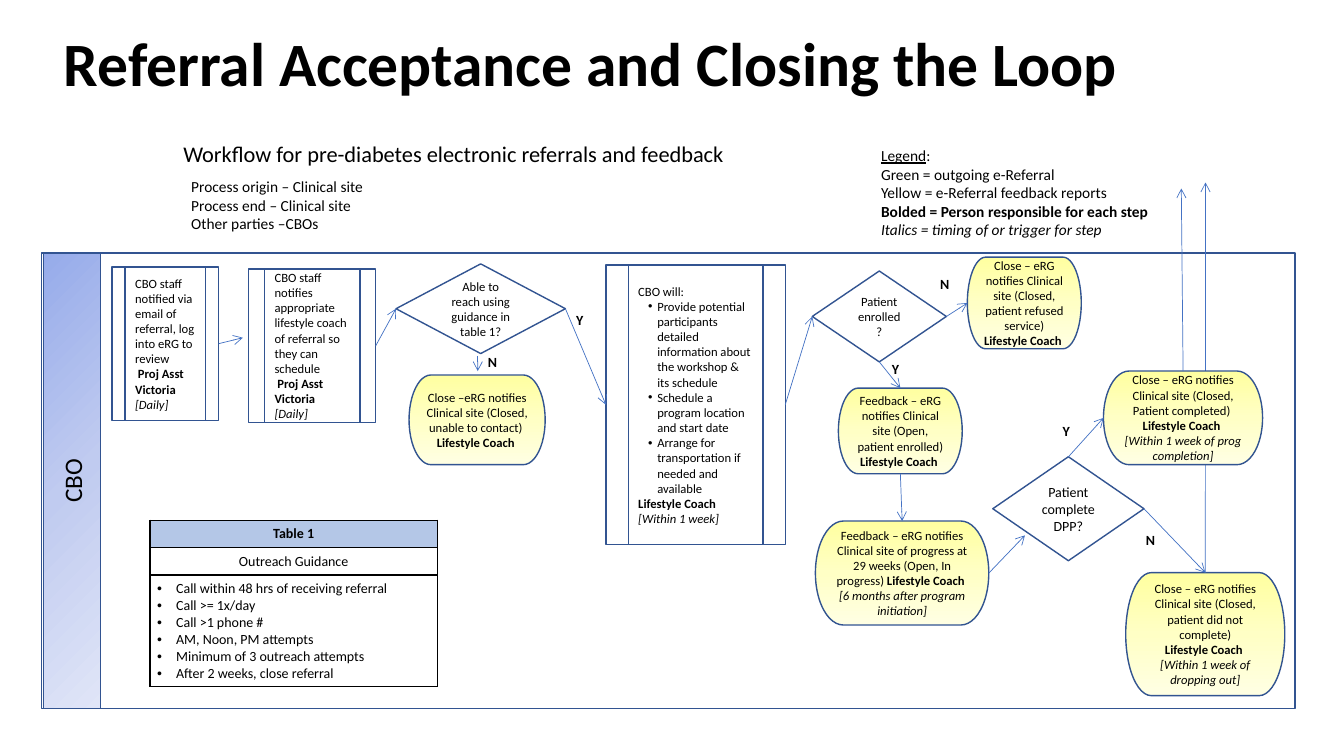
import copy

import lxml.etree
import pptx
import pptx.dml.color
import pptx.enum.shapes
import pptx.enum.text
import pptx.oxml.ns
import pptx.util

Cm = pptx.util.Cm
Pt = pptx.util.Pt
RGBColor = pptx.dml.color.RGBColor
Preset = pptx.enum.shapes.MSO_SHAPE
Align = pptx.enum.text.PP_ALIGN
Anchor = pptx.enum.text.MSO_ANCHOR
qn = pptx.oxml.ns.qn

BLACK = RGBColor(0x00, 0x00, 0x00)
OUTLINE = RGBColor(0x32, 0x54, 0x91)
ARROW = RGBColor(0x44, 0x72, 0xC4)
TABLE_HEAD = RGBColor(0xB4, 0xC7, 0xE7)
LANE_BLUES = [RGBColor(0x96, 0xAB, 0xEA), RGBColor(0xC0, 0xCB, 0xF0), RGBColor(0xE0, 0xE5, 0xF7)]
REPORT_YELLOWS = [RGBColor(0xFF, 0xFF, 0xA0), RGBColor(0xFF, 0xFF, 0xC5), RGBColor(0xFF, 0xFF, 0xE3)]

TOP, LEFT, BOTTOM, RIGHT = range(4)
BOLD = {"bold": True}
ITALIC = {"italic": True}
COACH = [("Lifestyle Coach ", BOLD)]
ASSISTANT = [[(" Proj Asst Victoria", BOLD)], [("[Daily]", ITALIC)]]
GUIDANCE = [
    "Call within 48 hrs of receiving referral",
    "Call >= 1x/day",
    "Call >1 phone #",
    "AM, Noon, PM attempts",
    "Minimum of 3 outreach attempts",
    "After 2 weeks, close referral",
]
WORKSHOP_TASKS = [
    "Provide potential participants detailed information about the workshop & its schedule",
    "Schedule a program location and start date",
    "Arrange for transportation if needed and available",
]


def apply_format(target, values):
    for name, value in values.items():
        setattr(target, name, value)


def box(left, top, width, height):
    return {"left": Cm(left), "top": Cm(top), "width": Cm(width), "height": Cm(height)}


def set_bullet(paragraph, indent):
    properties = paragraph._p.get_or_add_pPr()
    properties.set("marL", str(Cm(indent[0])))
    properties.set("indent", str(Cm(indent[1])))
    if indent[0]:
        lxml.etree.SubElement(properties, qn("a:buFont")).set("typeface", "Arial")
        lxml.etree.SubElement(properties, qn("a:buChar")).set("char", "•")
    else:
        lxml.etree.SubElement(properties, qn("a:buNone"))


def write(frame, paragraphs, size, align=Align.LEFT, bullets=None, spacing=1.0):
    for index, runs in enumerate(paragraphs):
        paragraph = frame.paragraphs[0] if index == 0 else frame.add_paragraph()
        apply_format(paragraph, {"alignment": align, "line_spacing": spacing, "space_before": Pt(0)})
        for wording, emphasis in [(runs, {})] if isinstance(runs, str) else runs:
            run = paragraph.add_run()
            run.text = wording
            apply_format(run.font, {"name": "Calibri", "size": Pt(size), "bold": False, **emphasis})
            run.font.color.rgb = BLACK
        if bullets and index in bullets:
            set_bullet(paragraph, bullets[index])


def shade(shape, colors, angle):
    shape.fill.gradient()
    shape.fill.gradient_angle = angle
    stops = shape.element.spPr.find(qn("a:gradFill")).find(qn("a:gsLst"))
    stops.insert(1, copy.deepcopy(stops[0]))
    for stop, position, color in zip(shape.fill.gradient_stops, (0, 0.5, 1), colors):
        stop.position = position
        stop.color.rgb = color


def add_step(slide, preset, place, paragraphs=(), size=9, align=Align.CENTER, bullets=None):
    step = slide.shapes.add_shape(preset, *box(*place).values())
    step.shadow.inherit = False
    step.fill.background()
    step.line.color.rgb = OUTLINE
    step.line.width = Pt(1)
    apply_format(step.text_frame, {"word_wrap": True, "vertical_anchor": Anchor.MIDDLE})
    write(step.text_frame, paragraphs, size, align, bullets)
    return step


def add_process(slide, place, paragraphs, bullets=None):
    return add_step(slide, Preset.FLOWCHART_PREDEFINED_PROCESS, place, paragraphs, 9, Align.LEFT, bullets)


def add_decision(slide, place, question, size=9):
    return add_step(slide, Preset.FLOWCHART_DECISION, place, [question], size)


def add_report(slide, place, paragraphs):
    report = add_step(slide, Preset.FLOWCHART_TERMINATOR, place, paragraphs)
    shade(report, REPORT_YELLOWS, 270)
    return report


def add_arrow(slide, start, end):
    points = [(Cm(spot[0]), Cm(spot[1])) if isinstance(spot[0], (int, float)) else (0, 0) for spot in (start, end)]
    arrow = slide.shapes.add_connector(pptx.enum.shapes.MSO_CONNECTOR.STRAIGHT, *points[0], *points[1])
    for spot, join in ((start, arrow.begin_connect), (end, arrow.end_connect)):
        if not isinstance(spot[0], (int, float)):
            join(*spot)
    arrow.line.color.rgb = ARROW
    arrow.line.width = Pt(0.5)
    lxml.etree.SubElement(arrow.line._get_or_add_ln(), qn("a:tailEnd")).set("type", "arrow")
    lxml.etree.SubElement(arrow.element.spPr, qn("a:effectLst"))


def add_note(slide, place, paragraphs, size, align=Align.LEFT, **frame_format):
    note = slide.shapes.add_textbox(*box(*place).values())
    apply_format(note.text_frame, {"word_wrap": False, **frame_format})
    write(note.text_frame, paragraphs, size, align)


def add_outreach_table(slide):
    table = slide.shapes.add_table(3, 1, *box(3.78, 13.11, 7.24, 4.15).values()).table
    apply_format(table, {"first_row": False, "horz_banding": False})
    contents = [
        ([[("Table 1", BOLD)]], 0.69, Align.CENTER, None),
        (["Outreach Guidance"], 0.69, Align.CENTER, None),
        (GUIDANCE, 2.77, Align.LEFT, dict.fromkeys(range(len(GUIDANCE)), (0.48, -0.48))),
    ]
    margins = {"margin_left": Cm(0.18), "margin_right": Cm(0.18), "margin_top": Cm(0.13), "margin_bottom": Cm(0.13)}
    for index, (paragraphs, height, align, bullets) in enumerate(contents):
        table.rows[index].height = Cm(height)
        cell = table.cell(index, 0)
        apply_format(cell, margins)
        write(cell.text_frame, paragraphs, 10, align, bullets)
        if index == 0:
            cell.fill.solid()
            cell.fill.fore_color.rgb = TABLE_HEAD
        else:
            cell.fill.background()
        for order, side in enumerate(("a:lnL", "a:lnR", "a:lnT", "a:lnB")):
            border = lxml.etree.Element(qn(side), w=str(Pt(1)))
            ink = lxml.etree.SubElement(border, qn("a:solidFill"))
            lxml.etree.SubElement(ink, qn("a:srgbClr")).set("val", str(BLACK))
            cell._tc.get_or_add_tcPr().insert(order, border)


def fill_placeholders(slide):
    legend = [
        [("Legend", {"underline": True}), (":", {})],
        "Green = outgoing e-Referral",
        "Yellow = e-Referral feedback reports",
        [("Bolded = Person responsible for each step", BOLD)],
        [("Italics = timing of or trigger for step", ITALIC)],
    ]
    title, body = slide.shapes.title, slide.placeholders[1]
    apply_format(title, box(1.35, 0.71, 29.21, 3.68))
    apply_format(body, box(21.95, 3.56, 7.65, 2.62))
    for holder in (title, body):
        apply_format(holder.text_frame, {
            "word_wrap": True, "vertical_anchor": Anchor.TOP, "auto_size": pptx.enum.text.MSO_AUTO_SIZE.NONE})
    write(title.text_frame, [[("Referral Acceptance and Closing the Loop", BOLD)]], 44, spacing=0.9)
    write(body.text_frame, legend, 11, bullets=dict.fromkeys(range(len(legend)), (0, 0)))


def add_workflow(slide):
    workshop = add_process(
        slide, (15.27, 6.68, 4.52, 7.04),
        ["CBO will:", *WORKSHOP_TASKS, [("Lifestyle Coach", BOLD)], [("[Within 1 week]", ITALIC)]],
        dict.fromkeys((1, 2, 3), (0.48, -0.23)))
    notified = add_process(slide, (2.82, 6.73, 2.69, 3.86), [
        "CBO staff notified via email of referral, log into eRG to review", *ASSISTANT])
    notifies = add_process(slide, (6.27, 6.78, 3.2, 3.86), [
        "CBO staff notifies appropriate lifestyle coach of referral so they can schedule", *ASSISTANT])
    reachable = add_decision(slide, (9.98, 6.65, 4.27, 2.26), "Able to reach using guidance in table 1?")
    enrolled = add_decision(slide, (20.47, 6.83, 3.38, 2.29), "Patient enrolled?")
    finished = add_decision(slide, (25.02, 11.51, 3.81, 2.62), "Patient complete DPP?", 10)
    refused = add_report(slide, (24.38, 6.48, 2.87, 2.31), [
        "Close – eRG notifies Clinical site (Closed, patient refused service)", COACH])
    add_report(slide, (10.31, 9.45, 3.43, 2.26), [
        "Close –eRG notifies Clinical site (Closed, unable to contact) ", COACH])
    opened = add_report(slide, (21.13, 9.78, 3.12, 2.16), [
        [("Feedback – eRG notifies Clinical site (Open, patient enrolled) ", {}), *COACH]])
    progress = add_report(slide, (20.55, 13.13, 4.37, 2.62), [
        [("Feedback – eRG notifies Clinical site of progress at 29 weeks (Open, In progress) ", {}), *COACH],
        [("[6 months after program initiation]", ITALIC)]])
    dropped = add_report(slide, (28.37, 14.43, 4.01, 3.1), [
        "Close – eRG notifies Clinical site (Closed, patient did not complete)", COACH,
        [("[Within 1 week of dropping out]", ITALIC)]])
    add_arrow(slide, (dropped, TOP), (30.38, 4.6))
    completed = add_report(slide, (27.81, 9.35, 4.01, 2.36), [
        "Close – eRG notifies Clinical site (Closed, Patient completed) ", COACH,
        [("[Within 1 week of prog completion]", ITALIC)]])
    for start, end in [
        ((notified, RIGHT), (6.12, 8.51)),
        ((notifies, RIGHT), (reachable, LEFT)),
        ((12.04, 8.97), (12.04, 9.35)),
        ((reachable, RIGHT), (workshop, LEFT)),
        ((workshop, RIGHT), (enrolled, LEFT)),
        ((enrolled, RIGHT), (refused, LEFT)),
        ((enrolled, BOTTOM), (opened, TOP)),
        ((opened, BOTTOM), (progress, TOP)),
        ((progress, RIGHT), (25.83, 13.49)),
        ((finished, TOP), (completed, LEFT)),
        ((finished, RIGHT), (dropped, TOP)),
        ((completed, TOP), (29.77, 4.75)),
    ]:
        add_arrow(slide, start, end)
    for answer, left, top in [
        ("N", 23.66, 6.81), ("N", 12.26, 8.79), ("Y", 14.46, 7.72),
        ("Y", 22.42, 8.97), ("Y", 26.72, 10.52), ("N", 28.84, 13.26),
    ]:
        add_note(slide, (left, top, 0.3, 0.69), [[(answer, BOLD)]], 10, Align.CENTER, margin_left=0, margin_right=0)


def main():
    deck = pptx.Presentation()
    apply_format(deck, {"slide_width": Cm(33.87), "slide_height": Cm(19.05)})
    slide = deck.slides.add_slide(deck.slide_layouts[1])
    fill_placeholders(slide)
    add_note(slide, (4.37, 3.4, 14.2, 0.94), ["Workflow for pre-diabetes electronic referrals and feedback"], 16)
    add_note(slide, (4.57, 4.34, 4.88, 1.68), [
        "Process origin – Clinical site", "Process end – Clinical site", "Other parties –CBOs"], 11)
    lane = add_step(slide, Preset.RECTANGLE, (1.09, 6.38, 1.45, 11.48), ["CBO"], 18)
    lane.element.txBody.find(qn("a:bodyPr")).set("vert", "vert270")
    shade(lane, LANE_BLUES, 315)
    add_step(slide, Preset.RECTANGLE, (1.04, 6.38, 31.6, 11.48))
    add_outreach_table(slide)
    add_workflow(slide)
    deck.save("out.pptx")


if __name__ == "__main__":
    main()
